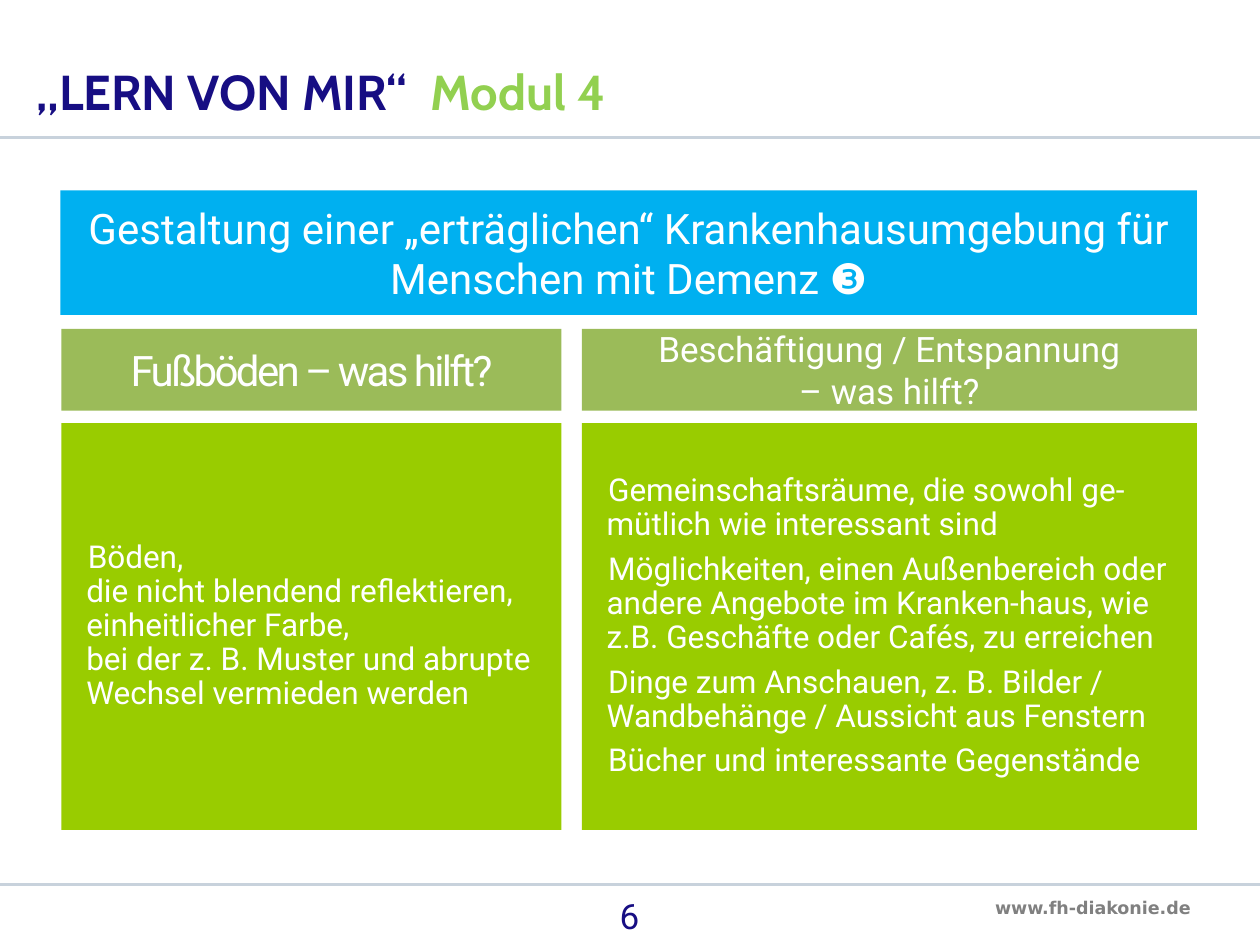
from dataclasses import dataclass

from lxml.etree import SubElement
from pptx import Presentation
from pptx.dml.color import RGBColor
from pptx.enum.shapes import MSO_CONNECTOR, MSO_SHAPE
from pptx.enum.text import MSO_ANCHOR, MSO_AUTO_SIZE, PP_ALIGN
from pptx.oxml.ns import qn
from pptx.util import Cm, Pt


@dataclass(frozen=True)
class Theme:
    navy: str = "170E83"
    lime: str = "92D050"
    blue: str = "00B0F0"
    olive: str = "9BBB59"
    green: str = "99CC00"
    white: str = "FFFFFF"
    gray: str = "808080"
    rule: str = "C8D2DC"
    title_font: str = "Cabin"
    body_font: str = "Roboto"
    link_font: str = "DejaVu Sans"
    title: int = 28
    banner: int = 24
    heading: int = 20
    body: int = 18
    link: int = 10


T = Theme()
SLIDE_W, SLIDE_H = Cm(25.4), Cm(19.05)

BODY_FORMAT = {"line_spacing": 0.9, "space_after": Pt(6), "alignment": PP_ALIGN.LEFT}
CENTERED = {"alignment": PP_ALIGN.CENTER}

# Columns: left, width, heading, heading size, letter spacing, paragraphs
COLUMNS = [
    (1.24, 10.08, "Fußböden – was hilft?", T.banner, -1.5, [
        "Böden,\vdie nicht blendend reflektieren,\veinheitlicher Farbe,\v"
        "bei der z. B. Muster und abrupte Wechsel vermieden werden",
    ]),
    (11.73, 12.4, "Beschäftigung / Entspannung\v– was hilft?", T.heading, 0, [
        "Gemeinschaftsräume, die sowohl ge-mütlich wie interessant sind",
        "Möglichkeiten, einen Außenbereich oder andere Angebote im Kranken-haus, "
        "wie z.B. Geschäfte oder Cafés, zu erreichen",
        "Dinge zum Anschauen, z. B. Bilder / Wandbehänge / Aussicht aus Fenstern",
        "Bücher und interessante Gegenstände",
    ]),
]


def apply(target, values):
    for name, value in values.items():
        setattr(target, name, value)


def style_run(r, font, size, color, bold=False, spacing=0):
    apply(r.font, {"name": font, "size": Pt(size), "bold": bold})
    r.font.color.rgb = RGBColor.from_string(color)
    if spacing:
        r.font._element.set("spc", str(int(spacing * 100)))


def write(tf, texts, paragraph_format, indent=False, **run_style):
    for i, text in enumerate(texts):
        p = tf.paragraphs[0] if i == 0 else tf.add_paragraph()
        p.text = text
        apply(p, paragraph_format)
        if indent:
            pPr = p._p.get_or_add_pPr()
            pPr.set("marL", str(Cm(0.25)))
            pPr.set("indent", str(Cm(0.03)))
        for r in p.runs:
            style_run(r, **run_style)


def add_panel(s, left, top, width, height, fill):
    sp = s.shapes.add_shape(MSO_SHAPE.RECTANGLE, Cm(left), Cm(top), Cm(width), Cm(height))
    sp.shadow.inherit = False
    sp.fill.solid()
    sp.fill.fore_color.rgb = RGBColor.from_string(fill)
    sp.line.fill.background()
    apply(sp.text_frame, {"word_wrap": True, "vertical_anchor": MSO_ANCHOR.MIDDLE})
    return sp.text_frame


def add_label(s, left, top, width, height, wrap=True):
    tf = s.shapes.add_textbox(Cm(left), Cm(top), Cm(width), Cm(height)).text_frame
    tf.word_wrap = wrap
    return tf


def add_rule(s, y):
    line = s.shapes.add_connector(MSO_CONNECTOR.STRAIGHT, 0, Cm(y), SLIDE_W, Cm(y))
    line.line.color.rgb = RGBColor.from_string(T.rule)
    line.line.width = Pt(1.5)
    SubElement(line._element.spPr, qn("a:effectLst"))


def set_title(s):
    title = s.shapes.title
    apply(title, {"left": Cm(0.48), "top": Cm(1.09), "width": Cm(16.94), "height": Cm(1.47)})
    tf = title.text_frame
    apply(tf, {"vertical_anchor": MSO_ANCHOR.BOTTOM, "word_wrap": True,
               "auto_size": MSO_AUTO_SIZE.NONE})
    p = tf.paragraphs[0]
    apply(p, {"alignment": PP_ALIGN.LEFT, "line_spacing": 0.9, "space_before": Pt(0)})
    # The spaced-out blank sets the module name apart
    for text, color, spacing in (("„LERN VON MIR“", T.navy, 0), (" ", T.navy, 7),
                                 ("Modul 4", T.lime, 0)):
        r = p.add_run()
        r.text = text
        style_run(r, T.title_font, T.title, color, bold=True, spacing=spacing)


def main():
    prs = Presentation()
    prs.slide_width, prs.slide_height = SLIDE_W, SLIDE_H
    s = prs.slides.add_slide(prs.slide_layouts[5])

    # Title and frame rules
    set_title(s)
    for y in (2.77, 17.83):
        add_rule(s, y)

    # Topic banner
    write(add_panel(s, 1.22, 3.84, 22.91, 2.51, T.blue),
          ["Gestaltung einer „erträglichen“ Krankenhausumgebung für Menschen mit Demenz ❸"],
          CENTERED, font=T.body_font, size=T.banner, color=T.white)

    # Two columns, each a heading over a body
    for left, width, heading, size, spacing, texts in COLUMNS:
        write(add_panel(s, left, 6.63, width, 1.65, T.olive), [heading], CENTERED,
              font=T.body_font, size=size, color=T.white, spacing=spacing)
        write(add_panel(s, left, 8.53, width, 8.2, T.green), texts, BODY_FORMAT,
              indent=True, font=T.body_font, size=T.body, color=T.white)

    # Footer
    write(add_label(s, 9.73, 17.91, 5.92, 1.14), ["6"], CENTERED,
          font=T.body_font, size=T.heading, color=T.navy)
    write(add_label(s, 19.81, 17.96, 4.52, 0.69, wrap=False), ["www.fh-diakonie.de"], {},
          font=T.link_font, size=T.link, color=T.gray, bold=True)

    prs.save("out.pptx")


if __name__ == "__main__":
    main()
